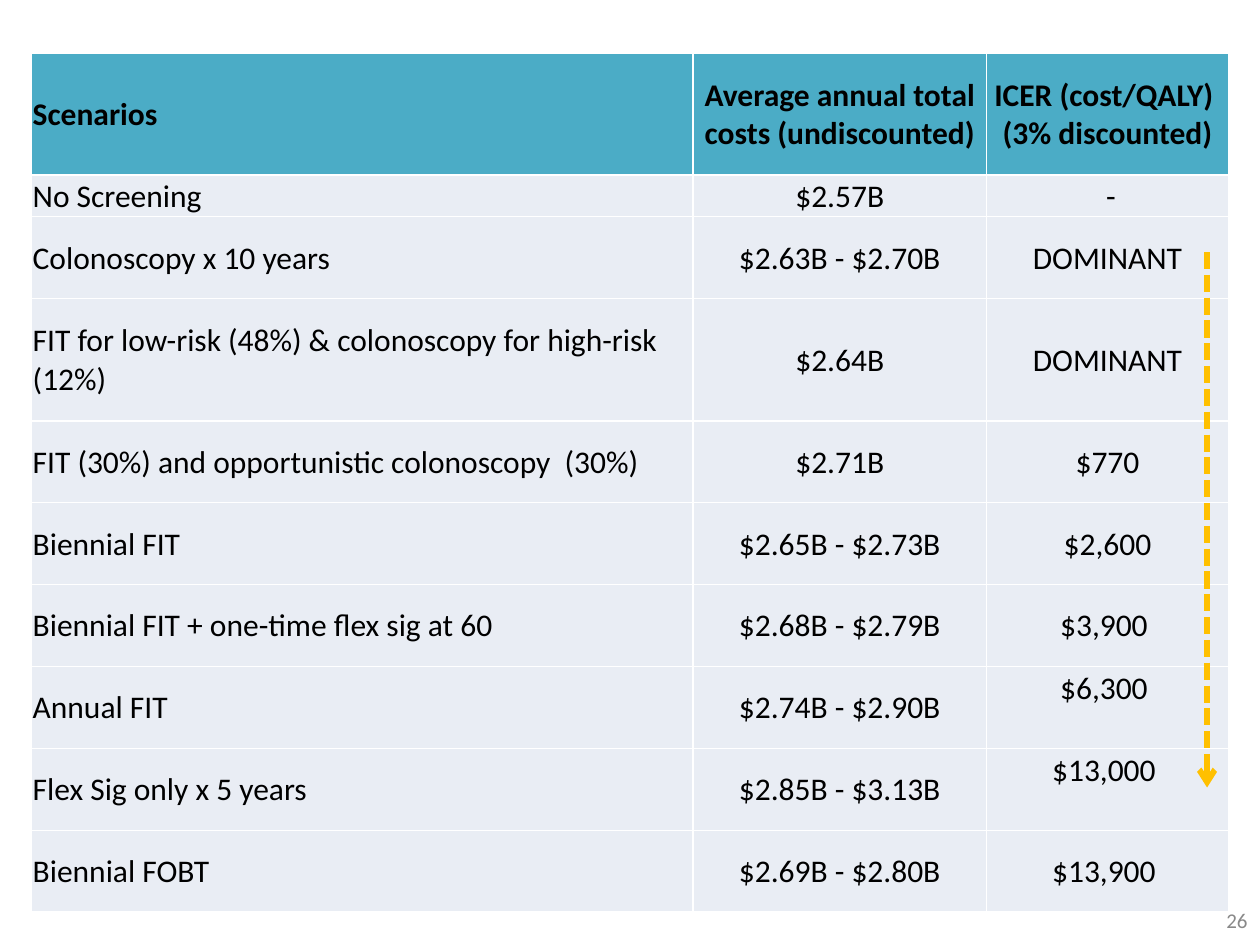
from lxml.etree import SubElement
from pptx import Presentation
from pptx.dml.color import RGBColor
from pptx.enum.dml import MSO_LINE
from pptx.enum.shapes import MSO_CONNECTOR
from pptx.enum.text import MSO_ANCHOR, PP_ALIGN as Align
from pptx.oxml import parse_xml
from pptx.oxml.ns import nsdecls, qn
from pptx.util import Inches, Pt

BLACK = RGBColor(0x00, 0x00, 0x00)
GREY = RGBColor(0x89, 0x89, 0x89)
TEAL = RGBColor(0x4B, 0xAC, 0xC6)
PALE = RGBColor(0xE9, 0xED, 0xF4)
AMBER = RGBColor(0xFF, 0xC0, 0x00)

COLUMN_WIDTHS = [5.25, 2.33, 1.92]
ROW_HEIGHTS = [0.97, 0.33, 0.65, 0.97] + [0.65] * 6
RAISED_COSTS = ("$6,300 ", "$13,000 ")
SCENARIOS = [
    ("Scenarios", "Average annual total costs (undiscounted)",
     "ICER (cost/QALY) \n(3% discounted)"),
    ("No Screening", "$2.57B", "\N{NO-BREAK SPACE}-"),
    ("Colonoscopy x 10 years", "$2.63B - $2.70B", "DOMINANT"),
    ("FIT for low-risk (48%) & colonoscopy for high-risk (12%)", "$2.64B", "DOMINANT"),
    ("FIT (30%) and opportunistic colonoscopy  (30%)", "$2.71B", "$770"),
    ("Biennial FIT", "$2.65B - $2.73B", "$2,600"),
    ("Biennial FIT + one-time flex sig at 60", "$2.68B - $2.79B", "$3,900 "),
    ("Annual FIT", "$2.74B - $2.90B", "$6,300 "),
    ("Flex Sig only x 5 years", "$2.85B - $3.13B", "$13,000 "),
    ("Biennial FOBT", "$2.69B - $2.80B", "$13,900 "),
]


class SlideBuilder:
    font = "Calibri"

    def __init__(self, slide):
        self.slide = slide

    def add_lines(self, frame, text, size, color, align, bold=False):
        for i, line in enumerate(text.split("\n")):
            paragraph = frame.paragraphs[0] if i == 0 else frame.add_paragraph()
            paragraph.alignment = align
            run = paragraph.add_run()
            run.text = line
            run.font.name, run.font.size = self.font, Pt(size)
            run.font.bold, run.font.color.rgb = bold, color

    def text(self, text, left, top, width, height, size, color, align):
        frame = self.slide.shapes.add_textbox(
            Inches(left), Inches(top), Inches(width), Inches(height)).text_frame
        frame.word_wrap = True
        frame.vertical_anchor = MSO_ANCHOR.MIDDLE
        self.add_lines(frame, text, size, color, align)

    def cell(self, cell, text, fill, align, bold):
        cell.margin_left = cell.margin_right = cell.margin_top = Inches(0.01)
        # Two costs sit above the middle of their row
        cell.margin_bottom = Inches(0.3 if text in RAISED_COSTS else 0)
        cell.vertical_anchor = MSO_ANCHOR.MIDDLE
        properties = cell._tc.get_or_add_tcPr()
        for side in "LRTB":
            properties.append(parse_xml(
                f'<a:ln{side} {nsdecls("a")} w="12700"><a:solidFill>'
                f'<a:srgbClr val="FFFFFF"/></a:solidFill></a:ln{side}>'))
        cell.fill.solid()
        cell.fill.fore_color.rgb = fill
        self.add_lines(cell.text_frame, text, 18, BLACK, align, bold)

    def table(self, rows, left, top, widths, heights):
        table = self.slide.shapes.add_table(
            len(rows), len(widths), Inches(left), Inches(top),
            Inches(sum(widths)), Inches(sum(heights))).table
        table.first_row = table.horz_banding = False
        for column, width in zip(table.columns, widths):
            column.width = Inches(width)
        for r, (values, height) in enumerate(zip(rows, heights)):
            table.rows[r].height = Inches(height)
            header = r == 0
            for c, value in enumerate(values):
                first = Align.JUSTIFY if header else Align.LEFT
                self.cell(table.cell(r, c), value, TEAL if header else PALE,
                          Align.CENTER if c else first, header)

    def dashed_arrow(self, x1, y1, x2, y2, color, width):
        arrow = self.slide.shapes.add_connector(
            MSO_CONNECTOR.STRAIGHT, Inches(x1), Inches(y1), Inches(x2), Inches(y2))
        arrow.line.color.rgb = color
        arrow.line.width = Pt(width)
        arrow.line.dash_style = MSO_LINE.SQUARE_DOT
        properties = arrow._element.spPr
        SubElement(properties.find(qn("a:ln")), qn("a:tailEnd"), type="arrow")
        SubElement(properties, qn("a:effectLst"))


def main():
    deck = Presentation()
    deck.slide_width, deck.slide_height = Inches(10), Inches(7.5)
    builder = SlideBuilder(deck.slides.add_slide(deck.slide_layouts[6]))

    # Slide number
    builder.text("26", 7.67, 7.1, 2.33, 0.4, 12, GREY, Align.RIGHT)
    # Cost comparison of the screening scenarios
    builder.table(SCENARIOS, 0.25, 0.42, COLUMN_WIDTHS, ROW_HEIGHTS)
    # Direction of rising cost per QALY
    builder.dashed_arrow(9.58, 2, 9.58, 6.25, AMBER, 3.25)

    deck.save("out.pptx")


if __name__ == "__main__":
    main()
